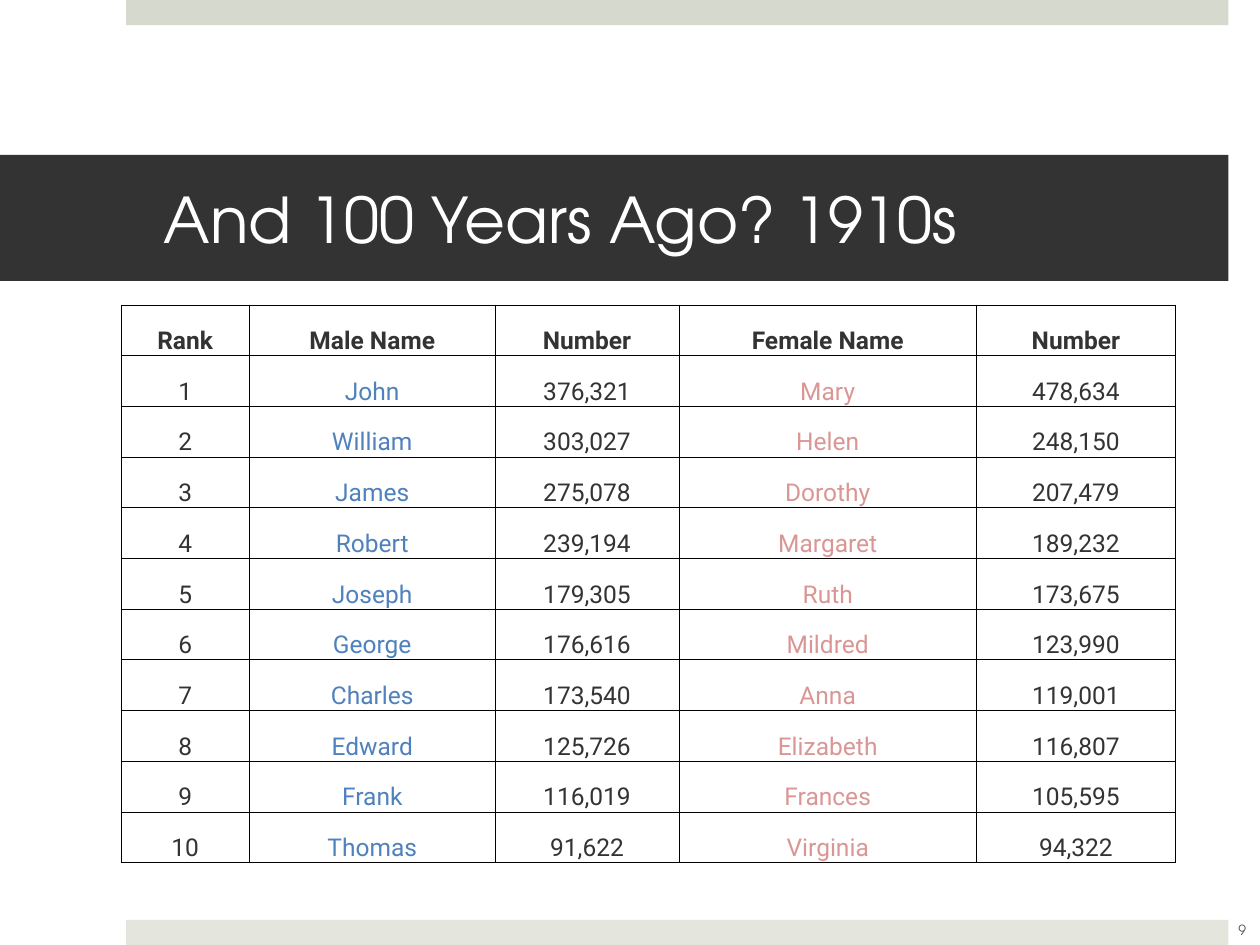
from dataclasses import dataclass

from lxml.etree import SubElement
from pptx import Presentation
from pptx.dml.color import RGBColor as Rgb
from pptx.enum.shapes import MSO_SHAPE as Shape
from pptx.enum.text import MSO_ANCHOR as Anchor, MSO_AUTO_SIZE as Auto, PP_ALIGN as Align
from pptx.oxml.ns import qn
from pptx.util import Inches, Pt


@dataclass(frozen=True)
class Theme:
    dark: str = "333333"
    white: str = "FFFFFF"
    male: str = "4F81BD"
    female: str = "DA9694"
    muted: str = "595959"
    top: str = "D6D9CD"
    foot: str = "E4E6DE"
    grid: str = "000000"
    head: str = "TeX Gyre Adventor"
    body: str = "Roboto"
    title: int = 36
    cell: int = 14
    small: int = 8
    rule: float = 0.5


THEME = Theme()
HEADS = ("Rank", "Male Name", "Number", "Female Name", "Number")
NAMES = (
    ("John", "376,321", "Mary", "478,634"),
    ("William", "303,027", "Helen", "248,150"),
    ("James", "275,078", "Dorothy", "207,479"),
    ("Robert", "239,194", "Margaret", "189,232"),
    ("Joseph", "179,305", "Ruth", "173,675"),
    ("George", "176,616", "Mildred", "123,990"),
    ("Charles", "173,540", "Anna", "119,001"),
    ("Edward", "125,726", "Elizabeth", "116,807"),
    ("Frank", "116,019", "Frances", "105,595"),
    ("Thomas", "91,622", "Virginia", "94,322"),
)
WIDTHS = (1.02, 1.95, 1.46, 2.36, 1.58)
INKS = (THEME.dark, THEME.male, THEME.dark, THEME.female, THEME.dark)


def write(frame, text, size, color, font=THEME.body, bold=False, align=Align.CENTER):
    para = frame.paragraphs[0]
    para.alignment = align
    run = para.add_run()
    run.text = text
    run.font.name = font
    run.font.size = Pt(size)
    run.font.bold = bold
    run.font.color.rgb = Rgb.from_string(color)


def inset(box, left, top, right, bottom):
    """Set the margins of a text frame or a table cell, in inches."""
    box.margin_left, box.margin_top = Inches(left), Inches(top)
    box.margin_right, box.margin_bottom = Inches(right), Inches(bottom)


def paint(item, color):
    item.fill.solid()
    item.fill.fore_color.rgb = Rgb.from_string(color)


def add_bar(slide, top, color):
    bar = slide.shapes.add_shape(
        Shape.RECTANGLE, Inches(1), Inches(top), Inches(8.75), Inches(0.2))
    bar.shadow.inherit = False
    paint(bar, color)
    bar.line.fill.background()


def set_title(slide, text):
    title = slide.shapes.title
    title.left, title.top = Inches(0), Inches(1.23)
    title.width, title.height = Inches(9.75), Inches(1)
    paint(title, THEME.dark)
    frame = title.text_frame
    frame.auto_size = Auto.NONE
    frame.vertical_anchor = Anchor.MIDDLE
    inset(frame, 1.3, 0.05, 0.3, 0.05)
    write(frame, text, THEME.title, THEME.white, font=THEME.head, align=Align.LEFT)


def add_number(slide, text):
    box = slide.shapes.add_textbox(Inches(9.61), Inches(7.18), Inches(0.5), Inches(0.4))
    frame = box.text_frame
    frame.word_wrap = True
    frame.vertical_anchor = Anchor.MIDDLE
    write(frame, text, THEME.small, THEME.muted, font=THEME.head)


def add_borders(cell):
    props = cell._tc.get_or_add_tcPr()
    for at, side in enumerate(("lnL", "lnR", "lnT", "lnB")):
        line = props.makeelement(qn(f"a:{side}"), {"w": str(Pt(THEME.rule))})
        fill = SubElement(line, qn("a:solidFill"))
        SubElement(fill, qn("a:srgbClr"), val=THEME.grid)
        props.insert(at, line)


def add_ranks(slide):
    rows = [HEADS] + [(str(rank), *row) for rank, row in enumerate(NAMES, 1)]
    table = slide.shapes.add_table(
        len(rows), len(HEADS), Inches(0.96), Inches(2.42),
        Inches(sum(WIDTHS)), Inches(4.43)).table
    for col, width in zip(table.columns, WIDTHS):
        col.width = Inches(width)
    for r, row in enumerate(rows):
        for c, text in enumerate(row):
            cell = table.cell(r, c)
            cell.fill.background()
            cell.vertical_anchor = Anchor.BOTTOM
            inset(cell, 0.01, 0.01, 0.01, 0)
            add_borders(cell)
            ink = INKS[c] if r else THEME.dark
            write(cell.text_frame, text, THEME.cell, ink, bold=r == 0)


def main():
    deck = Presentation()
    deck.slide_width, deck.slide_height = Inches(10), Inches(7.5)
    slide = deck.slides.add_slide(deck.slide_layouts[5])
    add_bar(slide, 0, THEME.top)
    add_bar(slide, 7.3, THEME.foot)
    set_title(slide, "And 100 Years Ago? 1910s")
    add_number(slide, "9")
    add_ranks(slide)
    deck.save("out.pptx")


if __name__ == "__main__":
    main()
